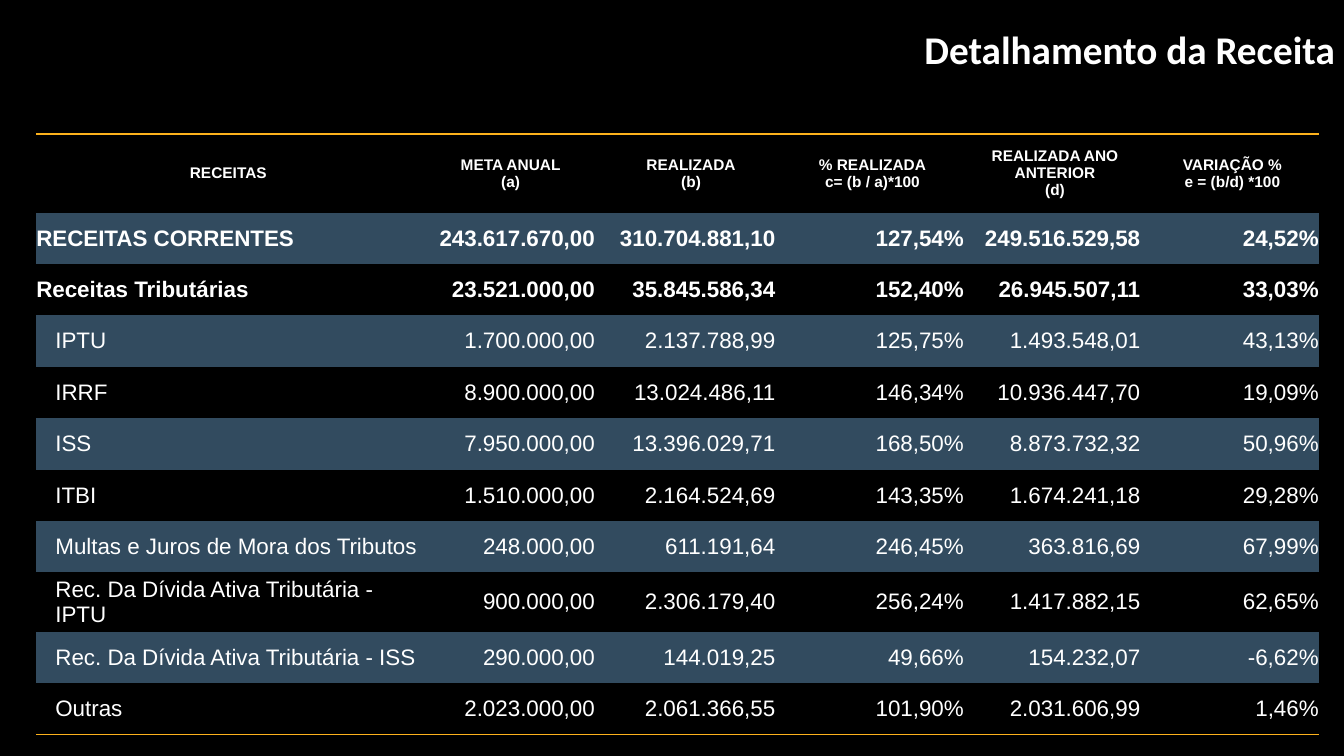
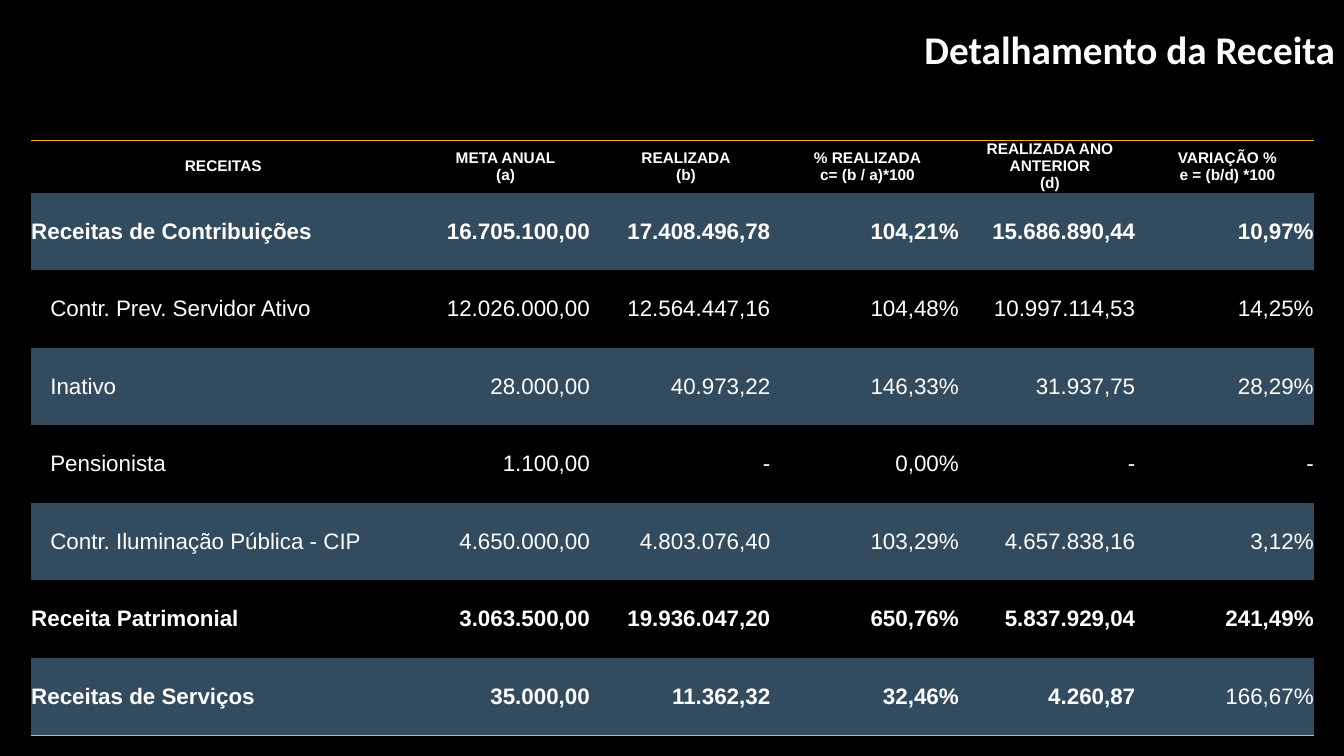
from pptx import Presentation
from pptx.dml.color import RGBColor
from pptx.enum.text import MSO_ANCHOR, PP_ALIGN
from pptx.oxml import parse_xml
from pptx.oxml.ns import nsdecls, qn
from pptx.util import Inches, Pt

BLACK = RGBColor(0x00, 0x00, 0x00)
WHITE = RGBColor(0xFF, 0xFF, 0xFF)
BAND = RGBColor(0x32, 0x4B, 0x5F)
GOLD = RGBColor(0xFC, 0xB1, 0x1C)
LEFT, CENTER, RIGHT = PP_ALIGN.LEFT, PP_ALIGN.CENTER, PP_ALIGN.RIGHT
TOP, MIDDLE = MSO_ANCHOR.TOP, MSO_ANCHOR.MIDDLE

TITLE = "Detalhamento da Receita"
NO_GRID_STYLE = "{2D5ABB26-0587-4C30-8999-92F81FD0307C}"
COL_WIDTHS = [3.81, 1.79, 1.79, 1.81, 1.81, 1.71]
AMOUNT_COLS = (1, 2, 4)
HEADER = (
    "RECEITAS",
    "META ANUAL\n(a)",
    "REALIZADA\n(b)",
    "% REALIZADA\nc= (b / a)*100",
    "REALIZADA ANO ANTERIOR\n(d)",
    "VARIAÇÃO %\ne = (b/d) *100",
)
GROUPS = {
    "RECEITAS CORRENTES",
    "Receitas Tributárias",
    "Receitas de Contribuições",
    "Receita Patrimonial",
    "Receitas de Serviços",
}
PLAIN_VALUES = {("Receitas de Serviços", 5)}

TAX_ROWS = [
    ("RECEITAS CORRENTES", "243.617.670,00", "310.704.881,10", "127,54%", "249.516.529,58", "24,52%"),
    ("Receitas Tributárias", "23.521.000,00", "35.845.586,34", "152,40%", "26.945.507,11", "33,03%"),
    ("IPTU", "1.700.000,00", "2.137.788,99", "125,75%", "1.493.548,01", "43,13%"),
    ("IRRF", "8.900.000,00", "13.024.486,11", "146,34%", "10.936.447,70", "19,09%"),
    ("ISS", "7.950.000,00", "13.396.029,71", "168,50%", "8.873.732,32", "50,96%"),
    ("ITBI", "1.510.000,00", "2.164.524,69", "143,35%", "1.674.241,18", "29,28%"),
    ("Multas e Juros de Mora dos Tributos", "248.000,00", "611.191,64", "246,45%", "363.816,69", "67,99%"),
    ("Rec. Da Dívida Ativa Tributária - IPTU", "900.000,00", "2.306.179,40", "256,24%", "1.417.882,15", "62,65%"),
    ("Rec. Da Dívida Ativa Tributária - ISS", "290.000,00", "144.019,25", "49,66%", "154.232,07", "-6,62%"),
    ("Outras", "2.023.000,00", "2.061.366,55", "101,90%", "2.031.606,99", "1,46%"),
]
CONTRIBUTION_ROWS = [
    ("Receitas de Contribuições", "16.705.100,00", "17.408.496,78", "104,21%", "15.686.890,44", "10,97%"),
    ("Contr. Prev. Servidor Ativo", "12.026.000,00", "12.564.447,16", "104,48%", "10.997.114,53", "14,25%"),
    ("Inativo", "28.000,00", "40.973,22", "146,33%", "31.937,75", "28,29%"),
    ("Pensionista", "1.100,00", "-", "0,00%", "-", "-"),
    ("Contr. Iluminação Pública - CIP", "4.650.000,00", "4.803.076,40", "103,29%", "4.657.838,16", "3,12%"),
    ("Receita Patrimonial", "3.063.500,00", "19.936.047,20", "650,76%", "5.837.929,04", "241,49%"),
    ("Receitas de Serviços", "35.000,00", "11.362,32", "32,46%", "4.260,87", "166,67%"),
]
SLIDES = [
    (0.36, 1.33, [0.78] + [0.51] * 7 + [0.59] + [0.51] * 2, TAX_ROWS),
    (0.31, 1.39, [0.52] + [0.77] * 7, CONTRIBUTION_ROWS),
]


def format_paragraph(p, align, font, size, bold):
    p.alignment = align
    p.font.name = font
    p.font.size = Pt(size)
    p.font.bold = bold
    p.font.color.rgb = WHITE


def add_border(cell, side):
    ln = parse_xml(
        f'<a:{side} {nsdecls("a")} w="12700"><a:solidFill>'
        f'<a:srgbClr val="{GOLD}"/></a:solidFill></a:{side}>'
    )
    cell._tc.get_or_add_tcPr().insert(0, ln)


prs = Presentation()
prs.slide_width = Inches(13.33)
prs.slide_height = Inches(7.5)
fill = prs.slide_master.background.fill
fill.solid()
fill.fore_color.rgb = BLACK
layout = prs.slide_layouts.get_by_name("Title Only")

for left, top, heights, rows in SLIDES:
    s = prs.slides.add_slide(layout)
    title = s.shapes.title
    title.left, title.top = Inches(4.91), Inches(0.2)
    title.width, title.height = Inches(8.43), Inches(0.57)
    tf = title.text_frame
    tf.text = TITLE
    tf.vertical_anchor = TOP
    format_paragraph(tf.paragraphs[0], RIGHT, "Calibri", 28, True)

    table = s.shapes.add_table(
        len(heights), len(COL_WIDTHS), Inches(left), Inches(top),
        Inches(sum(COL_WIDTHS)), Inches(sum(heights)),
    ).table
    table.first_row = table.horz_banding = False
    table._tbl.tblPr.find(qn("a:tableStyleId")).text = NO_GRID_STYLE
    for col, width in zip(table.columns, COL_WIDTHS):
        col.width = Inches(width)

    for i, (height, values) in enumerate(zip(heights, [HEADER] + rows)):
        table.rows[i].height = Inches(height)
        is_header = i == 0
        is_group = values[0] in GROUPS
        for j, value in enumerate(values):
            cell = table.cell(i, j)
            cell.text = value
            cell.vertical_anchor = MIDDLE
            is_item = j == 0 and not is_header and not is_group
            is_amount = j in AMOUNT_COLS and not is_header
            cell.margin_left = Inches(0.19 if is_item else 0)
            cell.margin_right = Inches(0.06 if is_amount else 0)
            cell.margin_top = cell.margin_bottom = 0
            if i % 2:
                cell.fill.solid()
                cell.fill.fore_color.rgb = BAND
            else:
                cell.fill.background()
            if is_header:
                add_border(cell, "lnT")
            elif i == len(rows):
                add_border(cell, "lnB")
            align = CENTER if is_header else RIGHT if j else LEFT
            bold = is_header or (is_group and (values[0], j) not in PLAIN_VALUES)
            for p in cell.text_frame.paragraphs:
                format_paragraph(p, align, "Arial", 11 if is_header else 16, bold)

prs.save("out.pptx")
